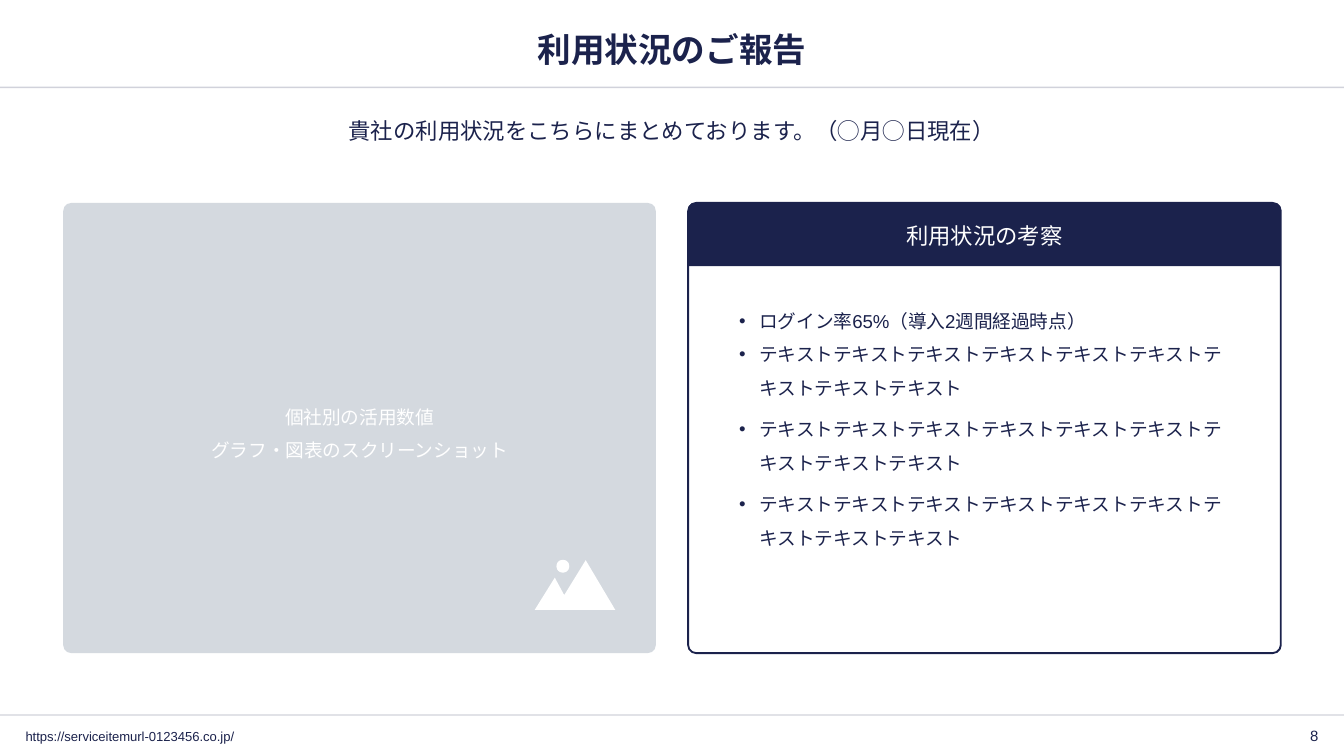
from dataclasses import dataclass
from math import cos, radians, sin
from typing import NamedTuple

from lxml import etree
from pptx import Presentation
from pptx.dml.color import RGBColor
from pptx.enum.shapes import MSO_CONNECTOR, MSO_SHAPE
from pptx.enum.text import MSO_ANCHOR, PP_ALIGN
from pptx.oxml.ns import qn
from pptx.util import Inches, Pt

LEFT, CENTER, RIGHT = PP_ALIGN.LEFT, PP_ALIGN.CENTER, PP_ALIGN.RIGHT
TOP, MIDDLE = MSO_ANCHOR.TOP, MSO_ANCHOR.MIDDLE
ROUND, TAB = MSO_SHAPE.ROUNDED_RECTANGLE, MSO_SHAPE.ROUND_2_SAME_RECTANGLE
STRAIGHT = MSO_CONNECTOR.STRAIGHT


@dataclass(frozen=True)
class Theme:
    font: str = "Arial"
    navy: str = "1B224C"
    gray: str = "D4D9DF"
    white: str = "FFFFFF"
    title: float = 18
    lead: float = 12
    body: float = 10
    page: float = 8
    link: float = 7
    inset: float = 0.04


class Box(NamedTuple):
    left: float
    top: float
    width: float
    height: float

    def sizes(self) -> list:
        return [Inches(value) for value in self]


class Label(NamedTuple):
    box: Box
    text: str
    size: float
    align: PP_ALIGN = LEFT
    anchor: MSO_ANCHOR = MIDDLE
    bold: bool = False


THEME = Theme()

# Page grid, 16 to 9
WIDTH = 10
HEIGHT = WIDTH * 9 / 16
EDGE, GAP = 0.47, 0.24
FULL = WIDTH - 2 * EDGE
HALF = (FULL - GAP) / 2
PANEL_TOP, PANEL_TALL, HEAD_TALL = 1.51, 3.35, 0.47
RULES = (0.65, 5.32)
CHART = Box(EDGE, PANEL_TOP, HALF, PANEL_TALL)
NOTES = CHART._replace(left=EDGE + HALF + GAP)

LABELS = (
    Label(Box(EDGE, 0.17, FULL, 0.39), "利用状況のご報告", THEME.title, CENTER, bold=True),
    Label(Box(EDGE, 0.83, FULL, 0.51),
          "貴社の利用状況をこちらにまとめております。（◯月◯日現在）", THEME.lead, CENTER, TOP),
    Label(Box(0.15, 5.38, 3.54, 0.2), "https://serviceitemurl-0123456.co.jp/", THEME.link),
    Label(Box(9.46, 5.37, 0.39, 0.2), "8", THEME.page, RIGHT),
)
POINTS = ["ログイン率65%（導入2週間経過時点）"] + ["テキスト" * 9] * 3

# Icon outline in thousandths of an inch
PEAKS = ((4360, 4170), (4580, 4540), (3980, 4540), (4130, 4300), (4200, 4430))
SUN_X, SUN_Y, SUN_R = 4190, 4215, 48
SUN = [(SUN_X + SUN_R * cos(radians(turn)), SUN_Y + SUN_R * sin(radians(turn)))
       for turn in range(0, 360, 15)]


def color(code: str) -> RGBColor:
    return RGBColor.from_string(code)


def write(shape, *lines: str, size: float, tint: str = THEME.navy, align=CENTER,
          anchor=MIDDLE, bold: bool = False, spacing: float = 1.0) -> list:
    """Fill a shape with paragraphs and return them."""
    frame = shape.text_frame
    frame.word_wrap = True
    frame.vertical_anchor = anchor
    frame.margin_left = frame.margin_right = Inches(THEME.inset)
    frame.margin_top = frame.margin_bottom = Inches(THEME.inset)
    for index, line in enumerate(lines):
        para = frame.add_paragraph() if index else frame.paragraphs[0]
        para.alignment = align
        para.line_spacing = spacing
        run = para.add_run()
        run.text = line
        run.font.name = THEME.font
        run.font.size = Pt(size)
        run.font.bold = bold
        run.font.color.rgb = color(tint)
        etree.SubElement(run._r.get_or_add_rPr(), qn("a:ea"), typeface=THEME.font)
    return list(frame.paragraphs)


def paint(shape, fill: str = "", line: str = "") -> None:
    shape.shadow.inherit = False
    if fill:
        shape.fill.solid()
        shape.fill.fore_color.rgb = color(fill)
    else:
        shape.fill.background()
    if line:
        shape.line.color.rgb = color(line)
        shape.line.width = Pt(1)
    else:
        shape.line.fill.background()


def add_panel(slide, kind, box: Box, curve: float, fill: str = "", line: str = ""):
    panel = slide.shapes.add_shape(kind, *box.sizes())
    panel.adjustments[0] = curve
    paint(panel, fill, line)
    return panel


def add_label(slide, label: Label) -> None:
    shape = slide.shapes.add_textbox(*label.box.sizes())
    write(shape, label.text, size=label.size, align=label.align,
          anchor=label.anchor, bold=label.bold)


def add_rule(slide, top: float) -> None:
    rule = slide.shapes.add_connector(STRAIGHT, 0, Inches(top), Inches(WIDTH), Inches(top))
    rule.line.color.rgb = color(THEME.navy)
    rule.line.width = Pt(0.75)
    props = rule.element.spPr
    tint = props.find(".//" + qn("a:srgbClr"))
    etree.SubElement(tint, qn("a:alpha"), val="20000")
    etree.SubElement(props, qn("a:effectLst"))


def add_bullet(para) -> None:
    props = para._p.get_or_add_pPr()
    props.set("marL", str(Inches(0.16)))
    props.set("indent", str(Inches(-0.15)))
    tint = etree.SubElement(props, qn("a:buClr"))
    etree.SubElement(tint, qn("a:srgbClr"), val=THEME.navy)
    etree.SubElement(props, qn("a:buFont"), typeface=THEME.font)
    etree.SubElement(props, qn("a:buChar"), char="•")


def add_icon(slide) -> None:
    outline = slide.shapes.build_freeform(*PEAKS[0], scale=Inches(0.001))
    outline.add_line_segments(PEAKS[1:], close=True)
    outline.move_to(*SUN[0])
    outline.add_line_segments(SUN[1:], close=True)
    paint(outline.convert_to_shape(), THEME.white)


def main() -> None:
    deck = Presentation()
    deck.slide_width, deck.slide_height = Inches(WIDTH), Inches(HEIGHT)
    slide = deck.slides.add_slide(deck.slide_layouts[6])

    # Rules, title, lead and footer
    for top in RULES:
        add_rule(slide, top)
    for label in LABELS:
        add_label(slide, label)

    # Findings panel
    add_panel(slide, ROUND, NOTES, 0.018, line=THEME.navy)
    head = add_panel(slide, TAB, NOTES._replace(height=HEAD_TALL), 0.105, THEME.navy)
    write(head, "利用状況の考察", size=THEME.lead, tint=THEME.white)

    # Chart area with its icon
    chart = add_panel(slide, ROUND, CHART, 0.018, THEME.gray)
    write(chart, "個社別の活用数値", "グラフ・図表のスクリーンショット",
          size=THEME.body, tint=THEME.white, spacing=1.5)
    add_icon(slide)

    # Bullet list
    items = slide.shapes.add_textbox(*Box(5.45, 2.18, 3.74, 2.36).sizes())
    paras = write(items, *POINTS, size=THEME.body, align=LEFT, anchor=TOP, spacing=1.5)
    for index, para in enumerate(paras):
        para.space_before = Pt(4 if index > 1 else 0)
        add_bullet(para)

    deck.save("out.pptx")


if __name__ == "__main__":
    main()
